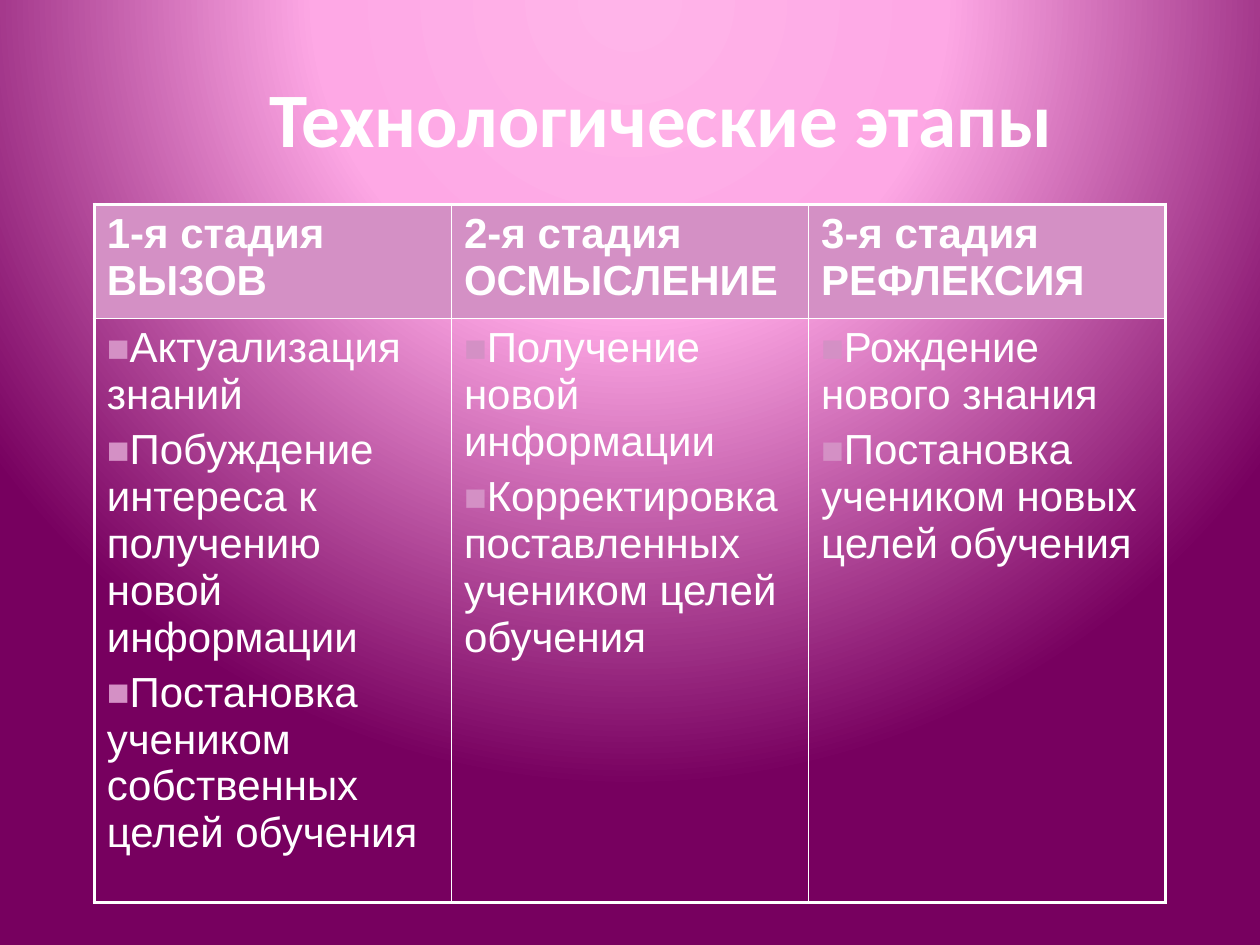
from pptx import Presentation
from pptx.dml.color import RGBColor
from pptx.enum.text import MSO_ANCHOR as Anchor, PP_ALIGN as Align
from pptx.oxml import parse_xml
from pptx.oxml.ns import nsdecls
from pptx.util import Cm, Pt

COLORS = {
    "text": "FFFFFF",
    "accent": "D490C5",
    "glow": "FFB4E9",
    "pink": "FEA8E5",
    "plum": "77005F",
}
GRADIENT = [(0, "glow"), (40, "pink"), (100, "plum")]
STAGES = [
    ("1-я стадия ВЫЗОВ", [
        "Актуализация знаний",
        "Побуждение интереса к получению новой информации",
        "Постановка учеником собственных целей обучения",
    ]),
    ("2-я стадия ОСМЫСЛЕНИЕ", [
        "Получение новой информации",
        "Корректировка поставленных учеником целей обучения",
    ]),
    ("3-я стадия РЕФЛЕКСИЯ", [
        "Рождение нового знания",
        "Постановка учеником новых целей обучения",
    ]),
]
ROW_HEIGHTS = [2.3, 10.97]
COLUMN_WIDTH = 7.2
THICK, THIN = 2.25, 1


def set_background(slide):
    """Fill the slide background with a circular gradient."""
    slide.background.fill.solid()
    properties = slide.background._cSld.bg.bgPr
    stops = "".join(
        f'<a:gs pos="{position * 1000}"><a:srgbClr val="{COLORS[name]}"/></a:gs>'
        for position, name in GRADIENT
    )
    gradient = parse_xml(
        f'<a:gradFill {nsdecls("a")} rotWithShape="1"><a:gsLst>{stops}</a:gsLst>'
        '<a:path path="circle"><a:fillToRect l="50000" t="-80000" '
        'r="50000" b="180000"/></a:path></a:gradFill>'
    )
    properties.replace(properties[0], gradient)


def format_runs(paragraph, font_name, size, bold):
    """Apply the font settings to every run of a paragraph."""
    for run in paragraph.runs:
        run.font.name = font_name
        run.font.size = Pt(size)
        run.font.bold = bold
        run.font.color.rgb = RGBColor.from_string(COLORS["text"])


def add_title(slide, text):
    """Add the centred slide title."""
    shape = slide.shapes.add_textbox(Cm(2.54), Cm(0.76), Cm(21.59), Cm(3.18))
    text_frame = shape.text_frame
    text_frame.word_wrap = True
    text_frame.vertical_anchor = Anchor.MIDDLE
    text_frame.text = text
    paragraph = text_frame.paragraphs[0]
    paragraph.alignment = Align.CENTER
    format_runs(paragraph, "Calibri", 44, True)


def add_bullet(paragraph):
    """Give a paragraph a small square bullet."""
    properties = paragraph._p.get_or_add_pPr()
    for element in (
        f'<a:buClr {nsdecls("a")}><a:srgbClr val="{COLORS["accent"]}"/></a:buClr>',
        f'<a:buSzPct {nsdecls("a")} val="90000"/>',
        f'<a:buFont {nsdecls("a")} typeface="Arial"/>',
        f'<a:buChar {nsdecls("a")} char="■"/>',
    ):
        properties.append(parse_xml(element))


def set_borders(cell, widths):
    """Draw the left, right, top and bottom borders of a cell."""
    properties = cell._tc.get_or_add_tcPr()
    for index, (side, width) in enumerate(zip("LRTB", widths)):
        properties.insert(index, parse_xml(
            f'<a:ln{side} {nsdecls("a")} w="{Pt(width)}"><a:solidFill>'
            f'<a:srgbClr val="{COLORS["text"]}"/></a:solidFill></a:ln{side}>'
        ))


def fill_cell(cell, lines, is_header):
    """Write the paragraphs of a cell and set its fill."""
    cell.text_frame.text = "\n".join(lines)
    for paragraph in cell.text_frame.paragraphs:
        paragraph.space_before = Pt(4.8)
        format_runs(paragraph, "Arial", 24, is_header)
        if not is_header:
            add_bullet(paragraph)
    if is_header:
        cell.fill.solid()
        cell.fill.fore_color.rgb = RGBColor.from_string(COLORS["accent"])
    else:
        cell.fill.background()


def add_stage_table(slide):
    """Add the table with one column per stage."""
    last_row, last_column = len(ROW_HEIGHTS) - 1, len(STAGES) - 1
    table = slide.shapes.add_table(
        len(ROW_HEIGHTS), len(STAGES), Cm(1.9), Cm(4.12),
        Cm(COLUMN_WIDTH * len(STAGES)), Cm(sum(ROW_HEIGHTS)),
    ).table
    table.first_row = table.horz_banding = False
    for row, height in zip(table.rows, ROW_HEIGHTS):
        row.height = Cm(height)
    for column, (heading, points) in enumerate(STAGES):
        table.columns[column].width = Cm(COLUMN_WIDTH)
        for row, lines in enumerate(([heading], points)):
            cell = table.cell(row, column)
            fill_cell(cell, lines, row == 0)
            outer_sides = (column == 0, column == last_column,
                           row == 0, row == last_row)
            set_borders(cell, [THICK if outer else THIN for outer in outer_sides])


def main():
    """Build and save the presentation."""
    presentation = Presentation()
    presentation.slide_width, presentation.slide_height = Cm(25.4), Cm(19.05)
    slide = presentation.slides.add_slide(presentation.slide_layouts[6])
    set_background(slide)
    add_title(slide, "Технологические этапы")
    add_stage_table(slide)
    presentation.save("out.pptx")


if __name__ == "__main__":
    main()
